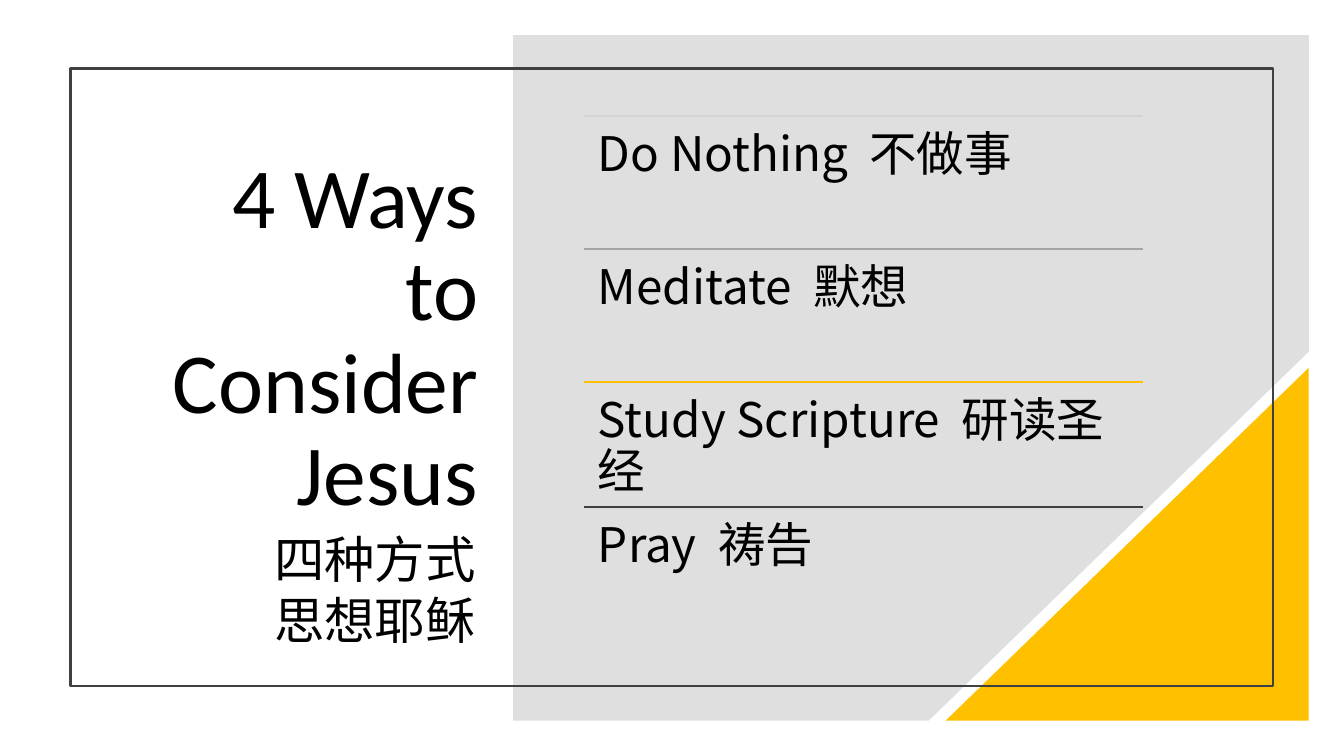
import pptx
import pptx.dml.color
import pptx.enum.shapes
import pptx.enum.text
import pptx.oxml.ns
import pptx.util
from lxml import etree

Inches = pptx.util.Inches
Pt = pptx.util.Pt
qn = pptx.oxml.ns.qn
SHAPE = pptx.enum.shapes.MSO_SHAPE
ALIGN = pptx.enum.text.PP_ALIGN
ANCHOR = pptx.enum.text.MSO_ANCHOR

COLORS = {
    "text": "000000",
    "panel": "808080",
    "accent": "FFC000",
    "frame": "404040",
    "pale": "D3D3D3",
    "mid": "A5A5A5",
}
CJK = "Noto Sans CJK JP"
WAYS = [
    ("Do Nothing", "不做事", "pale", 1.15),
    ("Meditate", "默想", "mid", 2.47),
    ("Study Scripture", "研读圣经", "accent", 3.79),
    ("Pray", "祷告", "frame", 5.03),
]


def rgb(name):
    return pptx.dml.color.RGBColor.from_string(COLORS[name])


def set_attrs(obj, values):
    for name, value in values.items():
        setattr(obj, name, value)


def paint(sp, fill=None, line=None):
    sp.shadow.inherit = False
    if fill:
        sp.fill.solid()
        sp.fill.fore_color.rgb = rgb(fill)
    else:
        sp.fill.background()
    if line:
        sp.line.color.rgb = rgb(line)
        sp.line.width = Pt(1.5)
    else:
        sp.line.fill.background()


def add_text_box(s, x, y, w, h, **frame):
    tf = s.shapes.add_textbox(Inches(x), Inches(y), Inches(w), Inches(h)).text_frame
    set_attrs(tf, {"word_wrap": True, **frame})
    return tf


def add_run(p, text, size, font=CJK, spacing=0):
    r = p.add_run()
    r.text = text
    set_attrs(r.font, {"size": Pt(size), "name": font})
    r.font.color.rgb = rgb("text")
    rPr = r.font._element
    etree.SubElement(rPr, qn("a:ea")).set("typeface", CJK)
    if spacing:
        rPr.set("spc", str(spacing))


def add_title(s, x, y, w, h):
    tf = add_text_box(s, x, y, w, h, vertical_anchor=ANCHOR.MIDDLE)
    p = tf.paragraphs[0]
    set_attrs(p, {"alignment": ALIGN.RIGHT, "line_spacing": 0.9})
    add_run(p, "4 Ways to Consider Jesus", 61, "Calibri")


def add_subtitle(s, x, y, w, h):
    tf = add_text_box(s, x, y, w, h, word_wrap=False)
    add_run(tf.paragraphs[0], "四种方式", 36)
    add_run(tf.add_paragraph(), "思想耶稣", 36)


def add_panel(s, x, y, w, h):
    right, bottom = x + w, y + h
    cut_x, cut_y = x + 4.12, y + 3.14
    corners = [(right, y), (right, cut_y), (cut_x, bottom), (x, bottom)]
    fb = s.shapes.build_freeform(Inches(x), Inches(y))
    fb.add_line_segments([(Inches(cx), Inches(cy)) for cx, cy in corners])
    sp = fb.convert_to_shape()
    paint(sp, fill="panel")
    clr = sp.fill._xPr.find(qn("a:solidFill"))[0]
    etree.SubElement(clr, qn("a:alpha")).set("val", "25000")

    tri_w, tri_h = 3.6, 3.5
    tri = s.shapes.add_shape(SHAPE.RIGHT_TRIANGLE, Inches(right - tri_w),
                             Inches(bottom - tri_h), Inches(tri_w), Inches(tri_h))
    paint(tri, fill="accent")
    tri._element.spPr.find(qn("a:xfrm")).set("flipH", "1")


def add_frame(s, x, y, w, h):
    sp = s.shapes.add_shape(SHAPE.RECTANGLE, Inches(x), Inches(y), Inches(w), Inches(h))
    paint(sp, line="frame")


def add_way(s, x, y, w, h, english, chinese, color):
    cn = s.shapes.add_connector(pptx.enum.shapes.MSO_CONNECTOR.STRAIGHT,
                                Inches(x), Inches(y), Inches(x + w), Inches(y))
    cn.line.color.rgb = rgb(color)
    cn.line.width = Pt(1)
    etree.SubElement(cn._element.spPr, qn("a:effectLst"))

    sides = ("left", "top", "right", "bottom")
    margins = {f"margin_{side}": Inches(0.14) for side in sides}
    p = add_text_box(s, x, y, w, h, **margins).paragraphs[0]
    p.line_spacing = 0.9
    add_run(p, english, 34)
    add_run(p, " ", 34, spacing=760)
    add_run(p, chinese, 34)


def build_slide(prs):
    s = prs.slides.add_slide(prs.slide_layouts[6])
    add_title(s, 1.49, 1.47, 3.35, 3.79)
    add_panel(s, 5.09, 0.35, 7.89, 6.8)
    add_frame(s, 0.7, 0.68, 11.93, 6.13)
    for english, chinese, color, y in WAYS:
        add_way(s, 5.79, y, 5.55, 1.32, english, chinese, color)
    add_subtitle(s, 2.62, 5.19, 2.22, 1.31)


def main():
    prs = pptx.Presentation()
    set_attrs(prs, {"slide_width": Inches(13.33), "slide_height": Inches(7.5)})
    build_slide(prs)
    prs.save("out.pptx")


if __name__ == "__main__":
    main()
